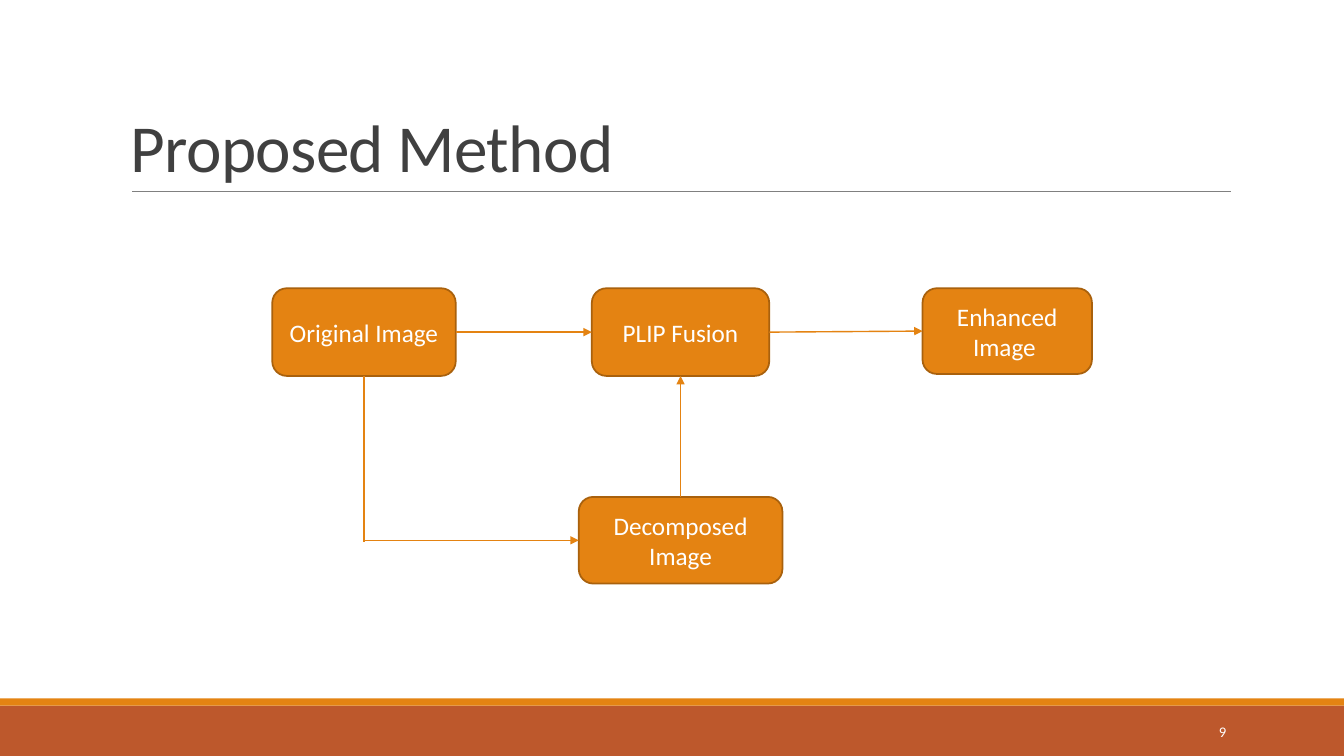
import pptx
import pptx.util
import pptx.dml.color
import pptx.enum.shapes
import pptx.enum.text
import pptx.oxml
import pptx.oxml.ns

WIDE, HIGH = 13.33, 7.5
FONT = "Calibri"
ORANGE, RUST, EDGE = "E48312", "BD582C", "A9610D"
WHITE, DARK, GREY = "FFFFFF", "404040", "808080"
TITLE, PAGE = "Proposed Method", "9"
TOP, LOW = 2.86, 4.93
BOXES = {
    "source": ("Original Image", 2.7, TOP, 1.82, 0.87),
    "fusion": ("PLIP Fusion", 5.87, TOP, 1.76, 0.87),
    "result": ("Enhanced Image ", 9.15, TOP, 1.68, 0.85),
    "parts": ("Decomposed Image", 5.74, LOW, 2.02, 0.86),
}
UP, LEFT, RIGHT = 0, 1, 3
LINKS = [
    ("source", RIGHT, "fusion", LEFT),
    ("fusion", RIGHT, "result", LEFT),
    ("parts", UP, "fusion", 2),
]

Inch = pptx.util.Inches
Kind = pptx.enum.shapes.MSO_SHAPE
Align = pptx.enum.text.PP_ALIGN
Anchor = pptx.enum.text.MSO_ANCHOR


def color(code):
    return pptx.dml.color.RGBColor.from_string(code)


def write(shape, text, size, code, align, anchor):
    frame = shape.text_frame
    frame.word_wrap = True
    frame.vertical_anchor = anchor
    para = frame.paragraphs[0]
    para.alignment = align
    run = para.add_run()
    run.text = text
    run.font.name = FONT
    run.font.size = pptx.util.Pt(size)
    run.font.color.rgb = color(code)
    return para, run


def block(kind, x, y, w, h, fill):
    shape = slide.shapes.add_shape(kind, Inch(x), Inch(y), Inch(w), Inch(h))
    shape.shadow.inherit = False
    shape.fill.solid()
    shape.fill.fore_color.rgb = color(fill)
    shape.line.fill.background()
    return shape


def line(x1, y1, x2, y2, code=ORANGE, width=1, arrow=False):
    link = slide.shapes.add_connector(
        pptx.enum.shapes.MSO_CONNECTOR.STRAIGHT,
        Inch(x1), Inch(y1), Inch(x2), Inch(y2))
    link.line.color.rgb = color(code)
    link.line.width = pptx.util.Pt(width)
    if arrow:
        tail = pptx.oxml.parse_xml(
            "<a:tailEnd %s type='triangle'/>" % pptx.oxml.ns.nsdecls("a"))
        link.line._get_or_add_ln().append(tail)
    link._element.spPr.append(pptx.oxml.parse_xml(
        "<a:effectLst %s/>" % pptx.oxml.ns.nsdecls("a")))
    return link


deck = pptx.Presentation()
deck.slide_width, deck.slide_height = Inch(WIDE), Inch(HIGH)
slide = deck.slides.add_slide(deck.slide_layouts[6])

block(Kind.RECTANGLE, 0, 7, WIDE, 0.5, RUST)
block(Kind.RECTANGLE, 0, 6.93, WIDE, 0.07, ORANGE)
line(1.31, 1.9, 12.21, 1.9, GREY, 0.5)

head = slide.shapes.add_textbox(Inch(1.2), Inch(0.31), Inch(11), Inch(1.59))
para, run = write(head, TITLE, 48, DARK, Align.LEFT, Anchor.BOTTOM)
para.line_spacing = 0.85
run.font._element.set("spc", "-50")

page = slide.shapes.add_textbox(Inch(10.83), Inch(7.06), Inch(1.43), Inch(0.4))
write(page, PAGE, 10.5, WHITE, Align.RIGHT, Anchor.MIDDLE)

nodes = {}
for name, (text, x, y, w, h) in BOXES.items():
    node = block(Kind.ROUNDED_RECTANGLE, x, y, w, h, ORANGE)
    node.line.color.rgb = color(EDGE)
    node.line.width = pptx.util.Pt(1.25)
    write(node, text, 18, WHITE, Align.CENTER, Anchor.MIDDLE)
    nodes[name] = node

_, x, y, w, h = BOXES["source"]
_, end, low, _, tall = BOXES["parts"]
mid, turn = x + w / 2, low + tall / 2
line(mid, y + h, mid, turn + 0.02)
bend = line(mid, turn, end, turn, arrow=True)
bend.end_connect(nodes["parts"], LEFT)

for start, out, goal, into in LINKS:
    link = line(0, 0, 1, 1, arrow=True)
    link.begin_connect(nodes[start], out)
    link.end_connect(nodes[goal], into)

deck.save("out.pptx")
